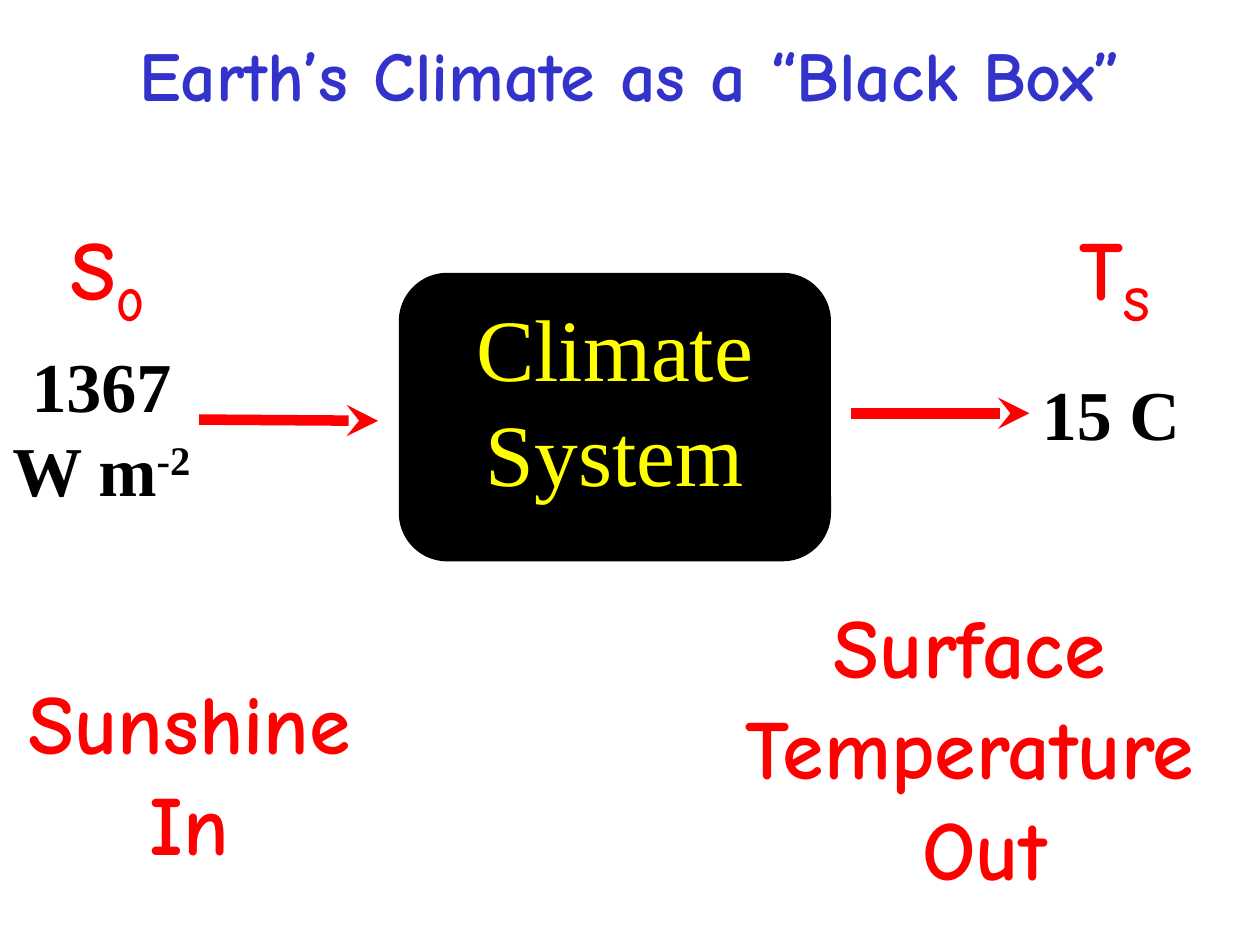
from lxml import etree
from pptx import Presentation
from pptx import util as u
from pptx.dml.color import RGBColor
from pptx.enum import shapes, text
from pptx.oxml import ns

COLUMNS, ROWS = 100, 75
CELL = u.Inches(0.1)
HAND, SERIF = "Comic Neue", "Times New Roman"
BLUE = RGBColor(0x33, 0x33, 0xCC)
RED = RGBColor(0xFF, 0, 0)
YELLOW = RGBColor(0xFF, 0xFF, 0)
BLACK = RGBColor(0, 0, 0)


def grid(*cells):
    return [round(cell * CELL) for cell in cells]


def write(frame, words, font=HAND, size=48, color=RED, bold=True,
          script="", baseline=0, align=text.PP_ALIGN.CENTER):
    para = frame.paragraphs[0]
    para.text = words
    para.alignment = align
    if script:
        span = para.add_run()
        span.text = script
        span.font._element.set("baseline", str(baseline * 1000))
    for span in para.runs:
        span.font.name = font
        span.font.size = u.Pt(size)
        span.font.bold = bold
        span.font.color.rgb = color


def add_label(page, area, words, wrap=False, anchor=text.MSO_ANCHOR.TOP, **style):
    frame = page.shapes.add_textbox(*grid(*area)).text_frame
    frame.word_wrap = wrap
    frame.vertical_anchor = anchor
    write(frame, words, **style)


def add_black_box(page, area, words):
    box = page.shapes.add_shape(shapes.MSO_SHAPE.ROUNDED_RECTANGLE, *grid(*area))
    box.shadow.inherit = False
    box.fill.solid()
    box.fill.fore_color.rgb = BLACK
    box.line.color.rgb = BLACK
    box.line.width = u.Pt(0.75)
    box.text_frame.word_wrap = True
    box.text_frame.vertical_anchor = text.MSO_ANCHOR.TOP
    write(box.text_frame, words, font=SERIF, size=50, color=YELLOW, bold=False)


def add_arrow(page, start, end):
    arrow = page.shapes.add_connector(
        shapes.MSO_CONNECTOR.STRAIGHT, *grid(*start, *end))
    arrow.line.color.rgb = RED
    arrow.line.width = u.Pt(6)
    line = arrow.line._get_or_add_ln()
    etree.SubElement(line, ns.qn("a:tailEnd"), type="stealth")
    etree.SubElement(arrow._element.spPr, ns.qn("a:effectLst"))


def main():
    deck = Presentation()
    deck.slide_width, deck.slide_height = grid(COLUMNS, ROWS)
    page = deck.slides.add_slide(deck.slide_layouts[6])
    value = dict(font=SERIF, size=40, color=BLACK)

    add_label(page, (0, 1.7, COLUMNS, 8.3), "Earth’s Climate as a “Black Box”",
              wrap=True, anchor=text.MSO_ANCHOR.MIDDLE, size=40, color=BLUE)
    add_label(page, (0, 52.7, 30.1, 17.2), "Sunshine\nIn")
    add_label(page, (56.3, 46.7, 43.7, 25.2), "Surface \vTemperature \vOut")
    add_black_box(page, (31.7, 21.7, 34.2, 22.8), "Climate System")
    add_label(page, (-0.3, 26.7, 16.7, 14.5), "1367\vW m",
              script="-2", baseline=30, **value)
    add_label(page, (81.7, 28.9, 13.1, 7.7), "15 C",
              align=text.PP_ALIGN.LEFT, **value)
    add_arrow(page, (15.8, 33.3), (30, 33.4))
    add_arrow(page, (67.5, 32.8), (81.7, 32.8))
    add_label(page, (3.8, 16.7, 9.4, 9.1), "S", script="0", baseline=-25)
    add_label(page, (83.6, 16.7, 9.8, 9.1), "T", script="S", baseline=-25)
    deck.save("out.pptx")


if __name__ == "__main__":
    main()
